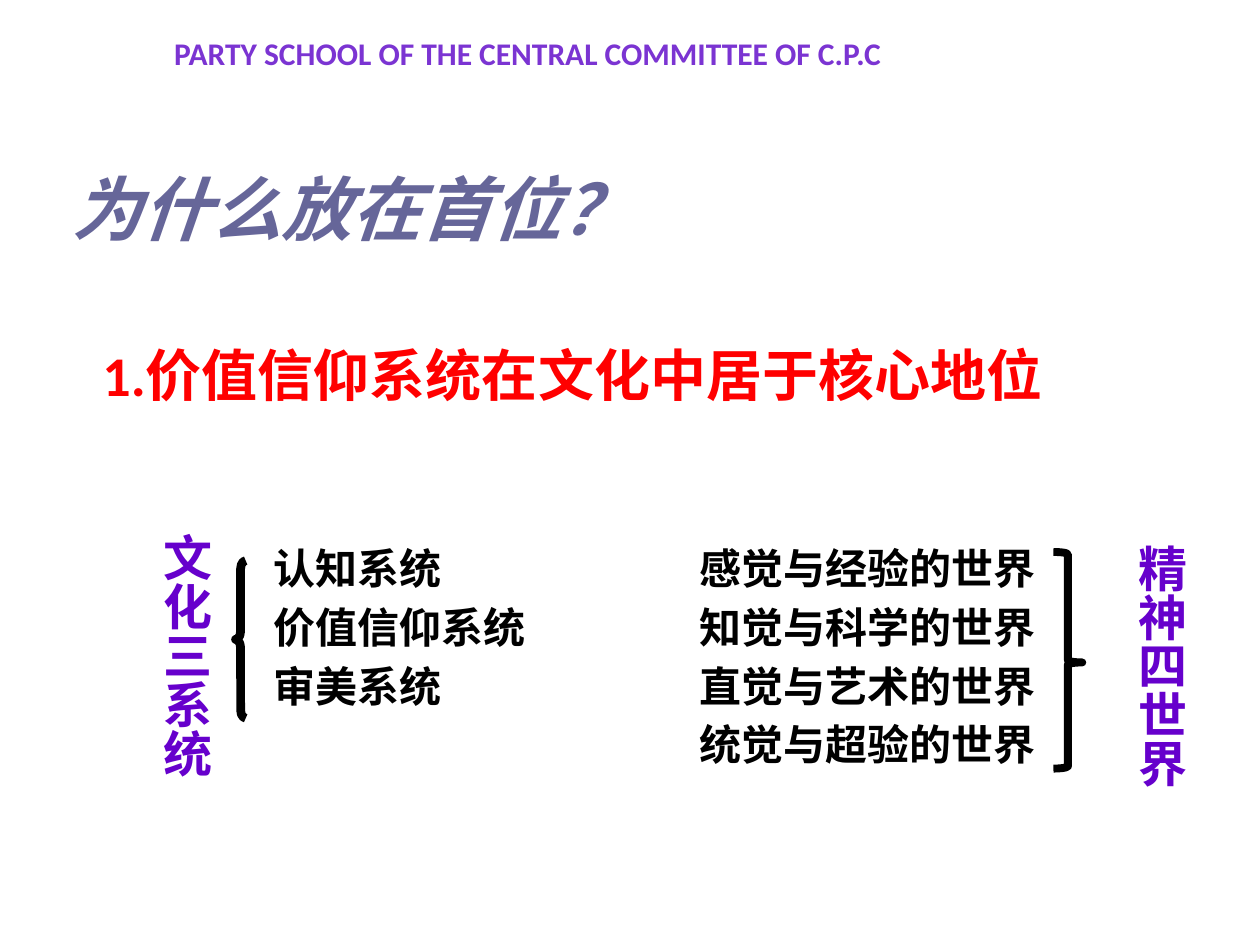
from dataclasses import dataclass
from typing import Optional

import pptx
import pptx.dml.color
import pptx.enum.shapes
import pptx.enum.text
import pptx.util

Pt = pptx.util.Pt
RGBColor = pptx.dml.color.RGBColor
MSO_SHAPE = pptx.enum.shapes.MSO_SHAPE
MSO_ANCHOR = pptx.enum.text.MSO_ANCHOR
MSO_AUTO_SIZE = pptx.enum.text.MSO_AUTO_SIZE
PP_ALIGN = pptx.enum.text.PP_ALIGN

HEADER = RGBColor(0x7B, 0x34, 0xD2)
TITLE = RGBColor(0x66, 0x66, 0x99)
RED = RGBColor(0xFF, 0x00, 0x00)
BLACK = RGBColor(0x00, 0x00, 0x00)
PURPLE = RGBColor(0x66, 0x00, 0xCC)
WHITE = RGBColor(0xFF, 0xFF, 0xFF)


@dataclass
class Label:
    text: str
    left: float
    top: float
    width: float
    height: float
    size: float
    color: RGBColor
    font: str = "Calibri"
    italic: bool = False
    wrap: bool = True
    vertical: bool = False
    align: PP_ALIGN = PP_ALIGN.LEFT
    anchor: MSO_ANCHOR = MSO_ANCHOR.TOP


@dataclass
class Brace:
    kind: MSO_SHAPE
    left: float
    top: float
    width: float
    height: float
    curve: float
    middle: float
    weight: float
    fill: Optional[RGBColor] = None


SYSTEMS = "认知系统\n价值信仰系统\n审美系统"
WORLDS = "感觉与经验的世界\n知觉与科学的世界\n直觉与艺术的世界\n统觉与超验的世界"

LABELS = [
    # Header, title and heading
    Label("PARTY SCHOOL OF THE CENTRAL COMMITTEE OF C.P.C", 84.2, 15.8, 434.9, 28.8,
          18, HEADER, wrap=False, align=PP_ALIGN.CENTER),
    Label("为什么放在首位？", 33.8, 68.4, 661, 100, 40, TITLE, italic=True,
          anchor=MSO_ANCHOR.MIDDLE),
    Label("1.价值信仰系统在文化中居于核心地位", 51.5, 190.8, 640, 50, 32, RED),
    # The two lists
    Label(SYSTEMS, 149, 306.5, 180, 110, 24, BLACK),
    Label(WORLDS, 392.5, 306.5, 210, 144, 24, BLACK),
    # Vertical captions
    Label("文化三系统", 78.5, 298, 48.2, 147, 28, PURPLE, "Arial",
          wrap=False, vertical=True),
    Label("精神四世界", 635.8, 303.8, 48.2, 147, 28, PURPLE, "Arial",
          wrap=False, vertical=True),
]

BRACES = [
    Brace(MSO_SHAPE.LEFT_BRACE, 134.6, 320.4, 5.8, 90, 0.79, 0.5, 5),
    Brace(MSO_SHAPE.RIGHT_BRACE, 602, 315.4, 16.5, 123.8, 0.08, 0.51, 4.5, WHITE),
]


def add_label(s: pptx.slide.Slide, label: Label) -> None:
    sp = s.shapes.add_textbox(Pt(label.left), Pt(label.top),
                              Pt(label.width), Pt(label.height))
    tf = sp.text_frame
    tf.text = label.text
    tf.word_wrap = label.wrap
    tf.vertical_anchor = label.anchor
    if not label.wrap:
        tf.auto_size = MSO_AUTO_SIZE.SHAPE_TO_FIT_TEXT
    if label.vertical:
        tf._txBody.bodyPr.set("vert", "eaVert")
    for i, p in enumerate(tf.paragraphs):
        p.alignment = label.align
        if i:
            p.space_before = Pt(label.size * 0.2)
        for r in p.runs:
            r.font.name = label.font
            r.font.size = Pt(label.size)
            r.font.bold = True
            r.font.italic = label.italic
            r.font.color.rgb = label.color


def add_brace(s: pptx.slide.Slide, brace: Brace) -> None:
    sp = s.shapes.add_shape(brace.kind, Pt(brace.left), Pt(brace.top),
                            Pt(brace.width), Pt(brace.height))
    sp.shadow.inherit = False
    sp.adjustments[0] = brace.curve
    sp.adjustments[1] = brace.middle
    sp.line.color.rgb = BLACK
    sp.line.width = Pt(brace.weight)
    if brace.fill is None:
        sp.fill.background()
    else:
        sp.fill.solid()
        sp.fill.fore_color.rgb = brace.fill


def main() -> None:
    prs = pptx.Presentation()
    prs.slide_width, prs.slide_height = Pt(720), Pt(540)
    s = prs.slides.add_slide(prs.slide_layouts[6])
    for brace in BRACES:
        add_brace(s, brace)
    for label in LABELS:
        add_label(s, label)
    prs.save("out.pptx")


if __name__ == "__main__":
    main()
